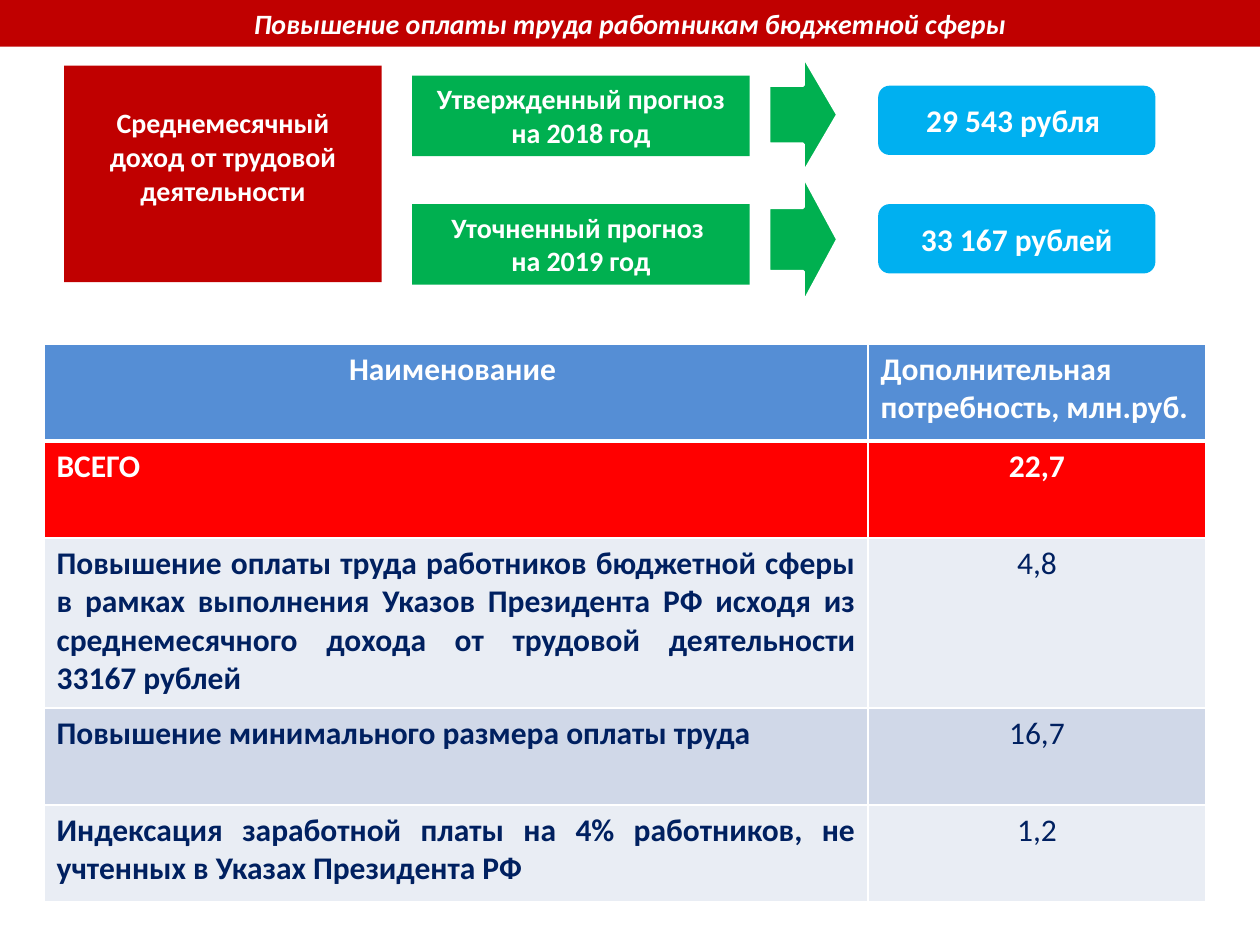
from dataclasses import dataclass

from lxml import etree
from pptx import Presentation
from pptx.dml.color import RGBColor
from pptx.enum.shapes import MSO_SHAPE
from pptx.enum.text import MSO_ANCHOR, PP_ALIGN
from pptx.oxml.ns import qn
from pptx.util import Inches, Pt

RECTANGLE = MSO_SHAPE.RECTANGLE
ROUNDED = MSO_SHAPE.ROUNDED_RECTANGLE
ARROW = MSO_SHAPE.RIGHT_ARROW
TOP, MIDDLE = MSO_ANCHOR.TOP, MSO_ANCHOR.MIDDLE
LEFT, CENTER, JUSTIFY = PP_ALIGN.LEFT, PP_ALIGN.CENTER, PP_ALIGN.JUSTIFY

WHITE = RGBColor(0xFF, 0xFF, 0xFF)
DARK_RED = RGBColor(0xC0, 0x00, 0x00)
RED = RGBColor(0xFF, 0x00, 0x00)
GREEN = RGBColor(0x00, 0xB0, 0x50)
SKY = RGBColor(0x00, 0xB0, 0xF0)
BLUE = RGBColor(0x55, 0x8E, 0xD5)
NAVY = RGBColor(0x00, 0x20, 0x60)
PALE = RGBColor(0xE9, 0xED, 0xF4)
PALE_BLUE = RGBColor(0xD0, 0xD8, 0xE8)
FONT = "Calibri"


@dataclass(frozen=True)
class Block:
    left: float
    top: float
    width: float
    height: float
    fill: RGBColor
    text: str = ""
    preset: int = RECTANGLE
    size: int = 16
    italic: bool = False
    anchor: int = TOP
    inset_top: float = 0.05
    outlined: bool = False


@dataclass(frozen=True)
class Forecast:
    label: str
    amount: str
    label_top: float
    arrow_top: float
    arrow_height: float
    amount_top: float


@dataclass(frozen=True)
class NeedRow:
    name: str
    amount: str
    height: float
    fill: RGBColor
    color: RGBColor = NAVY
    name_align: int = JUSTIFY
    amount_align: int = CENTER
    amount_bold: bool = False
    top_border: int = 1
    bottom_border: int = 1


FORECASTS = [
    Forecast("Утвержденный прогноз на 2018 год", "29 543 рубля ", 0.6, 0.44, 0.94, 0.68),
    Forecast("Уточненный прогноз \nна 2019 год", "33 167 рублей", 1.62, 1.39, 1.02, 1.62),
]

NEEDS = [
    NeedRow("Наименование ", "Дополнительная потребность, млн.руб.", 0.77, BLUE, WHITE,
            CENTER, LEFT, amount_bold=True, bottom_border=3),
    NeedRow("ВСЕГО", "22,7", 0.77, RED, WHITE, amount_bold=True, top_border=3),
    NeedRow("Повышение оплаты труда работников бюджетной сферы в рамках выполнения "
            "Указов Президента РФ исходя из среднемесячного дохода от трудовой "
            "деятельности 33167 рублей ", "4,8", 1.35, PALE),
    NeedRow("Повышение минимального размера оплаты труда", "16,7", 0.77, PALE_BLUE),
    NeedRow("Индексация заработной платы на 4% работников, не учтенных в Указах "
            "Президента РФ ", "1,2", 0.77, PALE),
]


def format_text(frame, align: int, size: int, color: RGBColor,
                bold: bool = True, italic: bool = False) -> None:
    for paragraph in frame.paragraphs:
        paragraph.alignment = align
        for run in paragraph.runs:
            run.font.name = FONT
            run.font.size = Pt(size)
            run.font.bold = bold
            run.font.italic = italic
            run.font.color.rgb = color


def draw_block(slide, block: Block) -> None:
    shape = slide.shapes.add_shape(block.preset, Inches(block.left), Inches(block.top),
                                   Inches(block.width), Inches(block.height))
    shape.shadow.inherit = False
    shape.fill.solid()
    shape.fill.fore_color.rgb = block.fill
    if block.outlined:
        shape.line.color.rgb = WHITE
        shape.line.width = Pt(2)
    else:
        shape.line.fill.background()
    if block.text:
        frame = shape.text_frame
        frame.word_wrap = True
        frame.vertical_anchor = block.anchor
        frame.margin_top = Inches(block.inset_top)
        frame.text = block.text
        format_text(frame, CENTER, block.size, WHITE, italic=block.italic)


def draw_forecast(slide, forecast: Forecast) -> None:
    draw_block(slide, Block(3.27, forecast.label_top, 2.68, 0.64, GREEN, forecast.label))
    draw_block(slide, Block(6.1, forecast.arrow_top, 0.55, forecast.arrow_height, GREEN,
                            preset=ARROW, outlined=True))
    draw_block(slide, Block(6.97, forecast.amount_top, 2.2, 0.55, SKY, forecast.amount,
                            preset=ROUNDED, size=18, anchor=MIDDLE))


def set_borders(cell, top: int, bottom: int) -> None:
    properties = cell._tc.get_or_add_tcPr()
    widths = {"a:lnL": 1, "a:lnR": 1, "a:lnT": top, "a:lnB": bottom}
    for position, (tag, width) in enumerate(widths.items()):
        border = etree.Element(qn(tag), w=str(Pt(width)))
        fill = etree.SubElement(border, qn("a:solidFill"))
        etree.SubElement(fill, qn("a:srgbClr"), val=str(WHITE))
        properties.insert(position, border)


def fill_cell(cell, text: str, align: int, bold: bool, need: NeedRow) -> None:
    cell.text_frame.text = text
    format_text(cell.text_frame, align, 18, need.color, bold)
    cell.fill.solid()
    cell.fill.fore_color.rgb = need.fill
    set_borders(cell, need.top_border, need.bottom_border)


def draw_needs(slide, needs: list[NeedRow]) -> None:
    table = slide.shapes.add_table(len(needs), 2, Inches(0.35), Inches(2.73),
                                   Inches(9.22), Inches(4.43)).table
    table.columns[0].width = Inches(6.54)
    table.columns[1].width = Inches(2.68)
    for index, need in enumerate(needs):
        table.rows[index].height = Inches(need.height)
        fill_cell(table.cell(index, 0), need.name, need.name_align, True, need)
        fill_cell(table.cell(index, 1), need.amount, need.amount_align,
                  need.amount_bold, need)


def main() -> None:
    presentation = Presentation()
    presentation.slide_width = Inches(10)
    presentation.slide_height = Inches(7.5)
    slide = presentation.slides.add_slide(presentation.slide_layouts[6])
    draw_block(slide, Block(0, 0, 10, 0.37, DARK_RED,
                            "Повышение оплаты труда работникам бюджетной сферы",
                            italic=True))
    draw_block(slide, Block(0.51, 0.52, 2.52, 1.72, DARK_RED,
                            "Среднемесячный доход от трудовой деятельности",
                            inset_top=0.32))
    for forecast in FORECASTS:
        draw_forecast(slide, forecast)
    draw_needs(slide, NEEDS)
    presentation.save("out.pptx")


if __name__ == "__main__":
    main()
